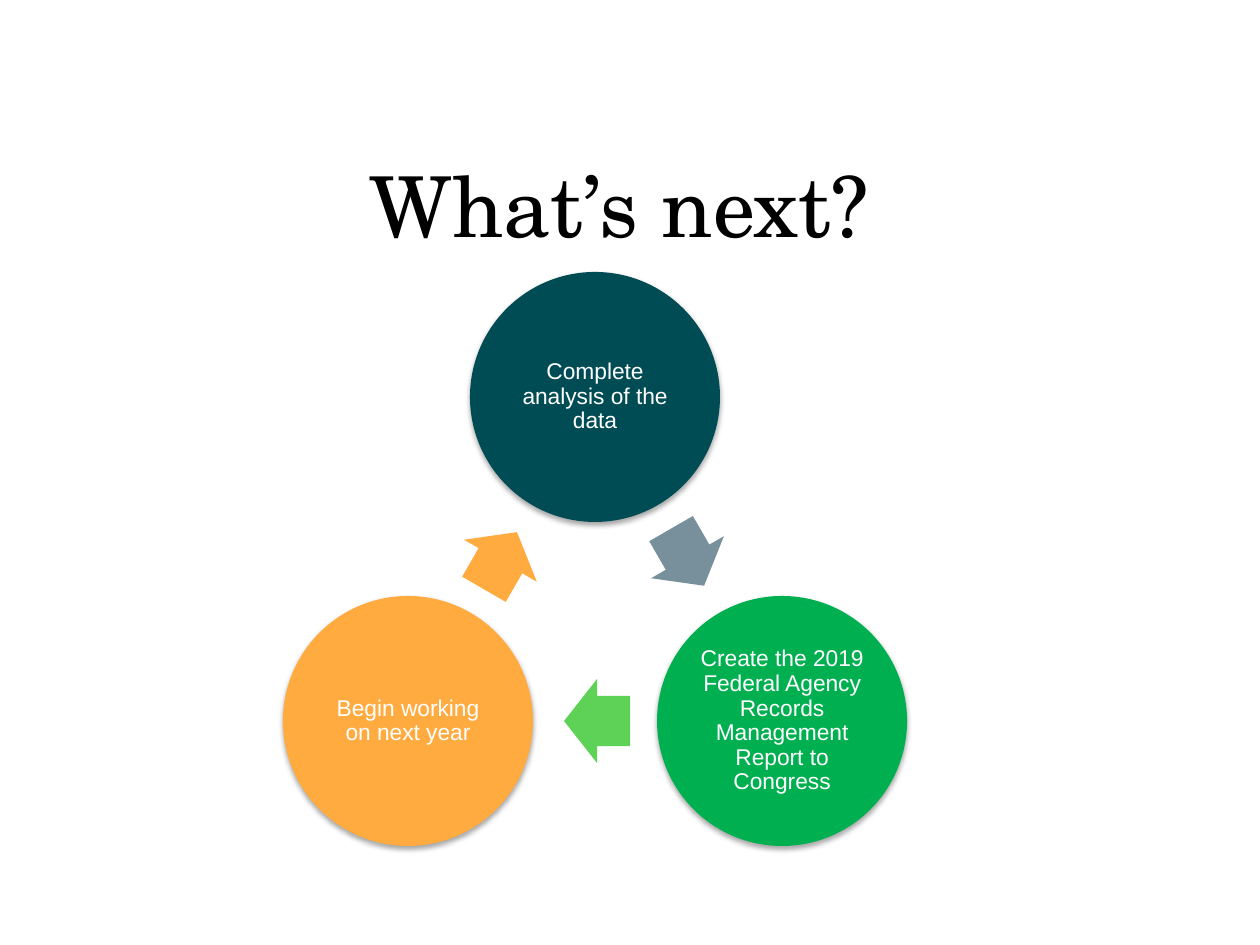
import math

from lxml import etree
from pptx import Presentation
from pptx import util as u
from pptx.dml.color import RGBColor
from pptx.enum import shapes, text
from pptx.oxml import ns

PX_PER_INCH = 126
COLORS = {
    "black": "000000",
    "white": "FFFFFF",
    "teal": "004C54",
    "slate": "78909C",
    "green": "00B050",
    "lime": "5ED257",
    "orange": "FFAB40",
}
STEPS = [
    ("Complete analysis of the data", "teal", "slate"),
    ("Create the 2019 Federal Agency Records Management Report to Congress", "green", "lime"),
    ("Begin working on next year", "orange", "orange"),
]
CYCLE_CENTER = (595, 613)
CYCLE_RADIUS = 216
CIRCLE_SIZE = 250
ARROW_SIZE = (66, 84)
ARROW_SETBACK = 2


def px(length):
    return u.Emu(round(length * u.Inches(1) / PX_PER_INCH))


def rgb(name):
    return RGBColor.from_string(COLORS[name])


def write(frame, words, *, font, size, color, align, anchor, wrap=True, inset=0, spacing=1.0):
    frame.word_wrap = wrap
    frame.auto_size = text.MSO_AUTO_SIZE.NONE
    frame.vertical_anchor = anchor
    if inset:
        frame.margin_left = frame.margin_right = px(inset)
        frame.margin_top = frame.margin_bottom = px(inset)
    paragraph = frame.paragraphs[0]
    paragraph.alignment = align
    paragraph.line_spacing = spacing
    run = paragraph.add_run()
    run.text = words
    run.font.name = font
    run.font.size = u.Pt(size)
    run.font.color.rgb = rgb(color)


def add_filled(slide, preset, center, size, color):
    (x, y), (width, height) = center, size
    shape = slide.shapes.add_shape(
        preset, px(x - width / 2), px(y - height / 2), px(width), px(height)
    )
    shape.shadow.inherit = False
    shape.fill.solid()
    shape.fill.fore_color.rgb = rgb(color)
    shape.line.fill.background()
    return shape


def cast_shadow(shape):
    effects = shape.element.spPr.find(ns.qn("a:effectLst"))
    shadow = etree.SubElement(
        effects, ns.qn("a:outerShdw"), blurRad=str(u.Pt(3.1)), dist=str(u.Pt(1.8)),
        dir="5400000", algn="ctr", rotWithShape="0",
    )
    tint = etree.SubElement(shadow, ns.qn("a:srgbClr"), val=COLORS["black"])
    etree.SubElement(tint, ns.qn("a:alpha"), val="35000")


def add_title(slide, words):
    title = slide.shapes.title
    title.left, title.top, title.width, title.height = map(px, (357, 147, 572, 115))
    write(title.text_frame, words, font="TeX Gyre Schola", size=48, color="black",
          align=text.PP_ALIGN.LEFT, anchor=text.MSO_ANCHOR.TOP, wrap=False)


def on_cycle(degrees, radius):
    angle = math.radians(degrees)
    x, y = CYCLE_CENTER
    return x + radius * math.cos(angle), y + radius * math.sin(angle)


def add_step(slide, words, color, degrees):
    circle = add_filled(slide, shapes.MSO_SHAPE.OVAL, on_cycle(degrees, CYCLE_RADIUS),
                        (CIRCLE_SIZE, CIRCLE_SIZE), color)
    cast_shadow(circle)
    write(circle.text_frame, words, font="Arial", size=13, color="white",
          align=text.PP_ALIGN.CENTER, anchor=text.MSO_ANCHOR.MIDDLE, inset=2, spacing=0.9)


def add_step_arrow(slide, color, degrees):
    heading = degrees + 90
    x, y = on_cycle(degrees, CYCLE_RADIUS / 2)
    center = (x - ARROW_SETBACK * math.cos(math.radians(heading)),
              y - ARROW_SETBACK * math.sin(math.radians(heading)))
    arrow = add_filled(slide, shapes.MSO_SHAPE.RIGHT_ARROW, center, ARROW_SIZE, color)
    arrow.adjustments[0] = 0.6
    arrow.adjustments[1] = 0.5
    arrow.rotation = heading


def main():
    deck = Presentation()
    deck.slide_width, deck.slide_height = px(1260), px(945)
    slide = deck.slides.add_slide(deck.slide_layouts[5])
    add_title(slide, "What’s next?")
    turn = 360 / len(STEPS)
    for index, (words, circle_color, arrow_color) in enumerate(STEPS):
        degrees = index * turn - 90
        add_step(slide, words, circle_color, degrees)
        add_step_arrow(slide, arrow_color, degrees + turn / 2)
    deck.save("out.pptx")


if __name__ == "__main__":
    main()
